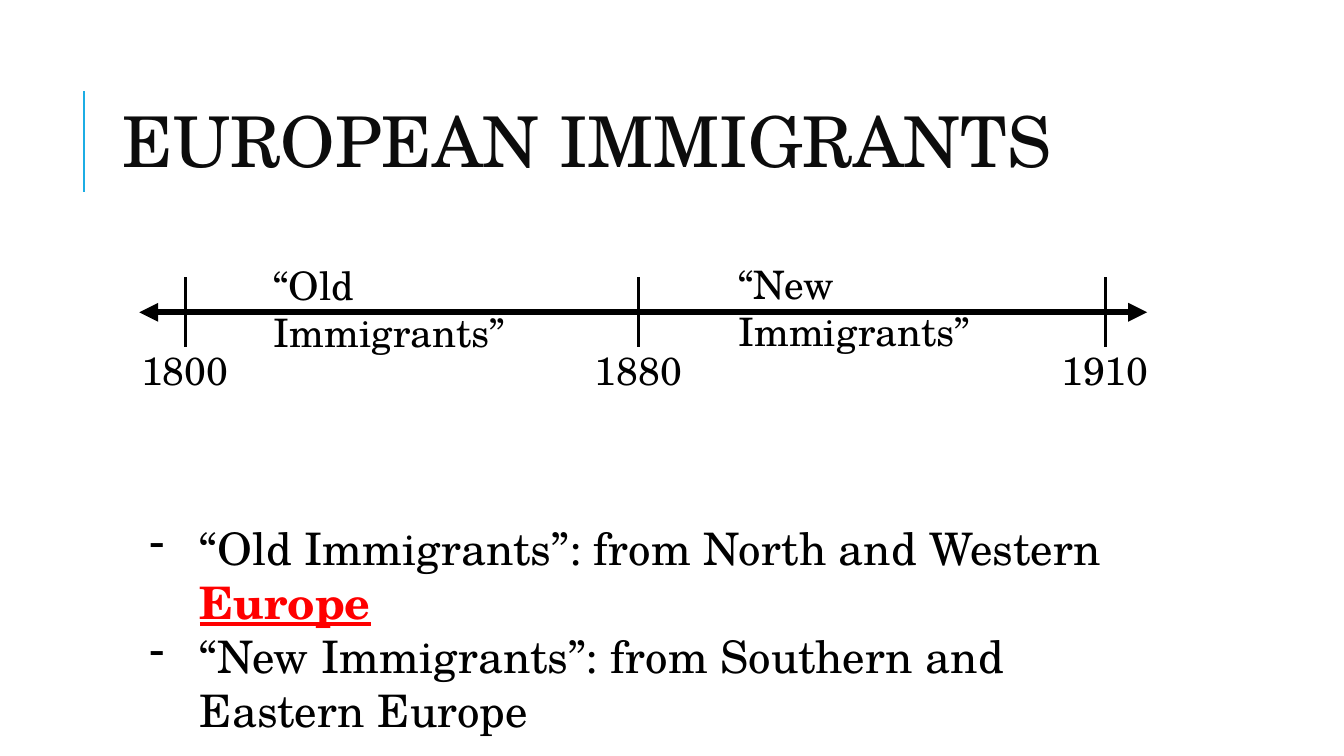
from dataclasses import dataclass

from lxml.etree import SubElement
from pptx import Presentation
from pptx.dml.color import RGBColor
from pptx.enum.shapes import MSO_CONNECTOR
from pptx.enum.text import MSO_ANCHOR, MSO_AUTO_SIZE, PP_ALIGN
from pptx.oxml.ns import qn
from pptx.util import Cm, Pt


@dataclass(frozen=True)
class Theme:
    font: str = "TeX Gyre Schola"
    ink: str = "000000"
    title_ink: str = "0C0C0C"
    accent: str = "1CADE4"
    highlight: str = "FF0000"
    title_size: float = 50
    label_size: float = 28
    body_size: float = 32


THEME = Theme()

YEARS = [("1800", 1.16), ("1880", 12.59), ("1910", 24.35)]
PERIODS = [("“Old Immigrants”", 3.14, 0.02, 7.34),
           ("“New Immigrants”", 14.85, 0, 7.59)]
ORIGINS = [
    [("“Old Immigrants”: from North and Western ", {}),
     ("Europe", {"color": THEME.highlight, "bold": True, "underline": True})],
    [("“New Immigrants”: from Southern and Eastern Europe", {})],
]


def add_text(paragraph, text, size=THEME.label_size, color=THEME.ink,
             bold=False, underline=False):
    run = paragraph.add_run()
    run.text = text
    run.font.name = THEME.font
    run.font.size = Pt(size)
    run.font.color.rgb = RGBColor.from_string(color)
    run.font.bold = bold
    run.font.underline = underline


def add_line(slide, start, end, width, color=THEME.ink, arrows=False):
    line = slide.shapes.add_connector(
        MSO_CONNECTOR.STRAIGHT, *map(Cm, start), *map(Cm, end))
    line.line.width = Pt(width)
    line.line.color.rgb = RGBColor.from_string(color)
    properties = line._element.spPr
    if arrows:
        outline = properties.find(qn("a:ln"))
        for tip in ("a:headEnd", "a:tailEnd"):
            SubElement(outline, qn(tip), type="triangle")
    SubElement(properties, qn("a:effectLst"))


def add_label(slide, text, left, top, width, height=1.45):
    label = slide.shapes.add_textbox(*map(Cm, (left, top, width, height)))
    label.text_frame.word_wrap = True
    label.text_frame.auto_size = MSO_AUTO_SIZE.SHAPE_TO_FIT_TEXT
    add_text(label.text_frame.paragraphs[0], text)


def move(placeholder, left, top, width, height):
    placeholder.left, placeholder.top = Cm(left), Cm(top)
    placeholder.width, placeholder.height = Cm(width), Cm(height)


def add_heading(slide, text, left, top, width, height):
    """Place the title with the accent rule to its left."""
    rule_x, rule_top = left - 0.73, top + 0.66
    add_line(slide, (rule_x, rule_top + 2.54), (rule_x, rule_top),
             1.5, THEME.accent)
    title = slide.shapes.title
    move(title, left, top, width, height)
    frame = title.text_frame
    frame.auto_size = MSO_AUTO_SIZE.NONE
    frame.vertical_anchor = MSO_ANCHOR.MIDDLE
    paragraph = frame.paragraphs[0]
    paragraph.alignment = PP_ALIGN.LEFT
    paragraph.line_spacing = 0.8
    add_text(paragraph, text, size=THEME.title_size, color=THEME.title_ink)


def add_timeline(slide, left, top, width):
    axis_y = top + 1.44
    add_line(slide, (left, axis_y), (left + width, axis_y), 4.5, arrows=True)
    year_width = 2.72
    for year, offset in YEARS:
        tick_x = left + offset
        add_line(slide, (tick_x, top + 0.56), (tick_x, top + 2.31), 2.25)
        add_label(slide, year, tick_x - year_width / 2, top + 2.16, year_width)
    for period, offset, drop, label_width in PERIODS:
        add_label(slide, period, left + offset, top + drop, label_width)


def add_origins(slide, left, top, width, height):
    """Fill the body placeholder with the dashed list."""
    body = slide.placeholders[1]
    move(body, left, top, width, height)
    frame = body.text_frame
    frame.auto_size = MSO_AUTO_SIZE.SHAPE_TO_FIT_TEXT
    for index, origin in enumerate(ORIGINS):
        paragraph = frame.add_paragraph() if index else frame.paragraphs[0]
        paragraph.space_before = Pt(0)
        properties = paragraph._p.get_or_add_pPr()
        properties.set("marL", str(Cm(1.27)))
        properties.set("indent", str(-Cm(1.27)))
        bullet_color = SubElement(properties, qn("a:buClr"))
        SubElement(bullet_color, qn("a:srgbClr"), val=THEME.ink)
        SubElement(properties, qn("a:buFontTx"))
        SubElement(properties, qn("a:buChar"), char="-")
        for text, style in origin:
            add_text(paragraph, text, size=THEME.body_size, **style)


def main():
    presentation = Presentation()
    presentation.slide_width = Cm(33.87)
    presentation.slide_height = Cm(19.05)
    slide = presentation.slides.add_slide(presentation.slide_layouts[1])
    add_heading(slide, "EUROPEAN IMMIGRANTS", 2.84, 1.63, 27, 4.17)
    add_timeline(slide, 3.51, 6.43, 25.4)
    add_origins(slide, 3.51, 13, 25.86, 3)
    presentation.save("out.pptx")


if __name__ == "__main__":
    main()
